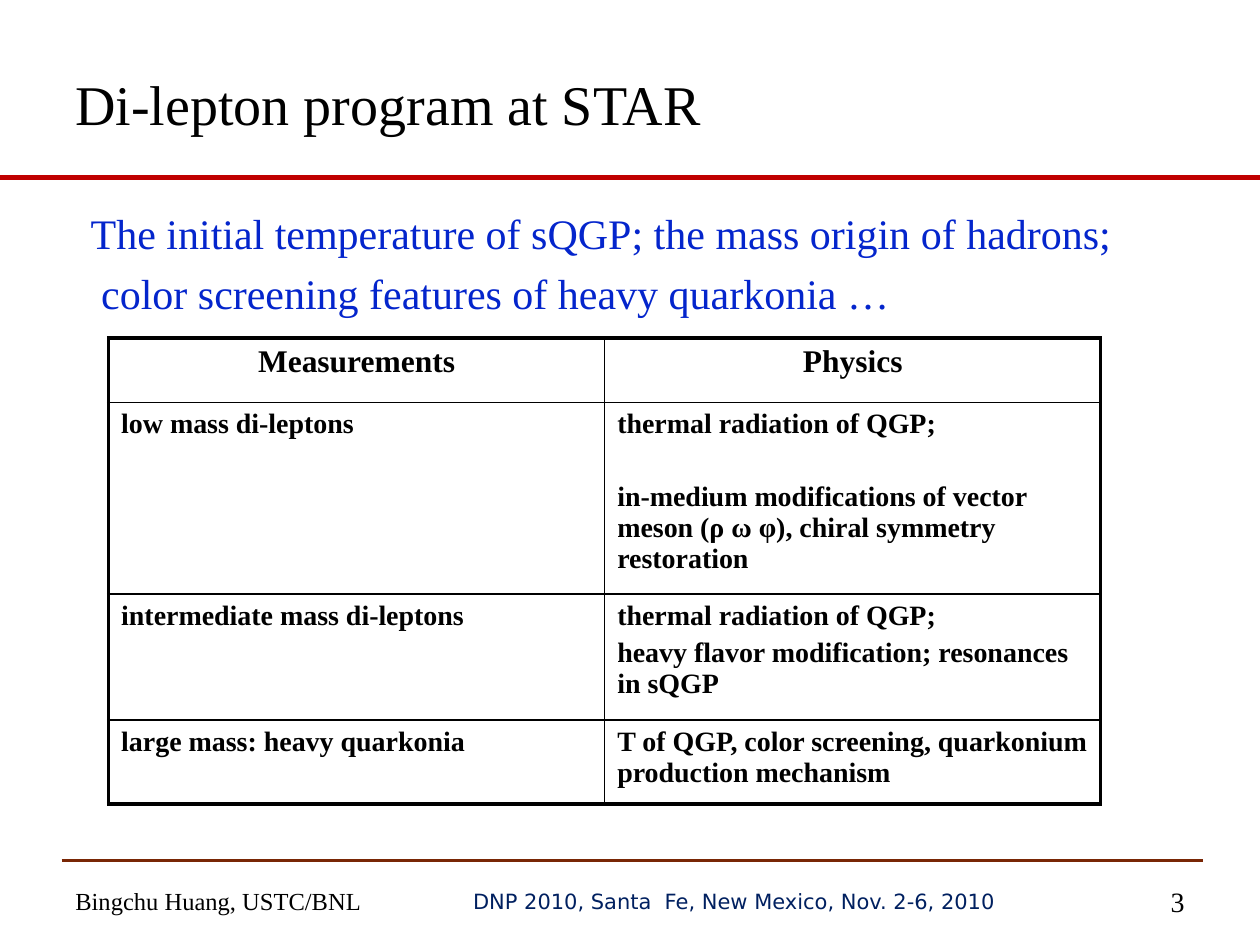
from dataclasses import dataclass

from lxml import etree
from pptx import Presentation
from pptx.dml.color import RGBColor
from pptx.enum.shapes import MSO_CONNECTOR
from pptx.enum.text import MSO_ANCHOR, PP_ALIGN
from pptx.oxml.ns import qn
from pptx.util import Cm, Pt

LEFT, CENTER, RIGHT = PP_ALIGN.LEFT, PP_ALIGN.CENTER, PP_ALIGN.RIGHT
TOP, MIDDLE = MSO_ANCHOR.TOP, MSO_ANCHOR.MIDDLE
STRAIGHT = MSO_CONNECTOR.STRAIGHT


@dataclass(frozen=True)
class Theme:
    serif: str = "Times New Roman"
    sans: str = "DejaVu Sans"
    ink: str = "000000"
    blue: str = "0425CC"
    navy: str = "002060"
    red: str = "C00000"
    brown: str = "792605"
    title: int = 32
    lead: int = 24
    head: int = 18
    cell: int = 16
    page: int = 16
    foot: int = 14
    venue: int = 12
    thick: float = 2.25
    thin: float = 1


THEME = Theme()

ROWS = [
    (1.3, ["Measurements"], ["Physics"]),
    (3.86, ["low mass di-leptons"],
     ["thermal radiation of QGP;",
      "in-medium modifications of vector meson (ρ ω φ), "
      "chiral symmetry restoration"]),
    (2.54, ["intermediate mass di-leptons"],
     ["thermal radiation of QGP;",
      "heavy flavor modification; resonances in sQGP"]),
    (1.7, ["large mass: heavy quarkonia"],
     ["T of QGP, color screening, quarkonium production mechanism"]),
]
GAPS = {1: 24, 2: 3.6}


def write(frame, lines, size, color=THEME.ink, font=THEME.serif,
          align=LEFT, bold=False, gap=0):
    frame.word_wrap = True
    for i, line in enumerate(lines):
        para = frame.add_paragraph() if i else frame.paragraphs[0]
        para.text = line
        para.alignment = align
        para.space_before = Pt(gap if i else 0)
        para.font.name = font
        para.font.size = Pt(size)
        para.font.bold = bold
        para.font.color.rgb = RGBColor.from_string(color)


def add_text(slide, box, lines, size, anchor=MIDDLE, **style):
    frame = slide.shapes.add_textbox(*map(Cm, box)).text_frame
    frame.vertical_anchor = anchor
    write(frame, lines, size, **style)
    return frame


def add_rule(slide, left, top, width, color, weight):
    rule = slide.shapes.add_connector(
        STRAIGHT, Cm(left), Cm(top), Cm(left + width), Cm(top))
    rule.line.color.rgb = RGBColor.from_string(color)
    rule.line.width = Pt(weight)
    etree.SubElement(rule._element.spPr, qn("a:effectLst"))


def add_edge(cell, side, weight):
    props = cell._tc.get_or_add_tcPr()
    edge = etree.SubElement(props, qn(f"a:ln{side}"), w=str(Pt(weight)))
    fill = etree.SubElement(edge, qn("a:solidFill"))
    etree.SubElement(fill, qn("a:srgbClr"), val=THEME.ink)


def add_header(slide, box):
    left, top, width, height = box
    add_text(slide, (left + 1.27, top + 0.76, width - 2.54, 2.62),
             ["Di-lepton program at STAR"], THEME.title)
    add_rule(slide, left, top + height, width, THEME.red, 3)


def add_lead(slide, box):
    frame = add_text(
        slide, box,
        ["The initial temperature of sQGP; the mass origin of hadrons;",
         "color screening features of heavy quarkonia …"],
        THEME.lead, TOP, color=THEME.blue, gap=5.5)
    frame.paragraphs[1]._p.get_or_add_pPr().set("marL", str(Cm(0.21)))


def add_grid(slide, box):
    table = slide.shapes.add_table(len(ROWS), 2, *map(Cm, box)).table
    table.first_row = table.horz_banding = False
    for col in table.columns:
        col.width = Cm(box[2] / 2)
    last = len(ROWS) - 1
    for r, (height, *texts) in enumerate(ROWS):
        table.rows[r].height = Cm(height)
        for c, lines in enumerate(texts):
            cell = table.cell(r, c)
            outer = {"L": c == 0, "R": c == 1, "T": r == 0, "B": r == last}
            for side, edge in outer.items():
                add_edge(cell, side, THEME.thick if edge else THEME.thin)
            cell.fill.background()
            write(cell.text_frame, lines,
                  THEME.cell if r else THEME.head, bold=True,
                  align=LEFT if r else CENTER, gap=GAPS.get(r, 0))


def add_footer(slide, box):
    left, top, width, height = box
    add_rule(slide, left, top, width, THEME.brown, 2)
    row = top + 0.3
    deep = height - 0.3
    add_text(slide, (left + 0.03, row, 6.27, deep),
             ["Bingchu Huang, USTC/BNL"], THEME.foot)
    add_text(slide, (left + 7.5, row, 12.12, deep),
             ["DNP 2010, Santa  Fe, New Mexico, Nov. 2-6, 2010"],
             THEME.venue, color=THEME.navy, font=THEME.sans, align=CENTER)
    add_text(slide, (left + 19.79, row, 3.1, deep), ["3"],
             THEME.page, align=RIGHT)


def main():
    deck = Presentation()
    deck.slide_width, deck.slide_height = Cm(25.4), Cm(19.05)
    slide = deck.slides.add_slide(deck.slide_layouts[6])
    add_header(slide, (0, 0, 25.4, 3.58))
    add_lead(slide, (1.58, 4.06, 21.28, 2.6))
    add_grid(slide, (2.19, 6.81, 20, 9.4))
    add_footer(slide, (1.24, 17.35, 23.01, 1.32))
    deck.save("out.pptx")


if __name__ == "__main__":
    main()
